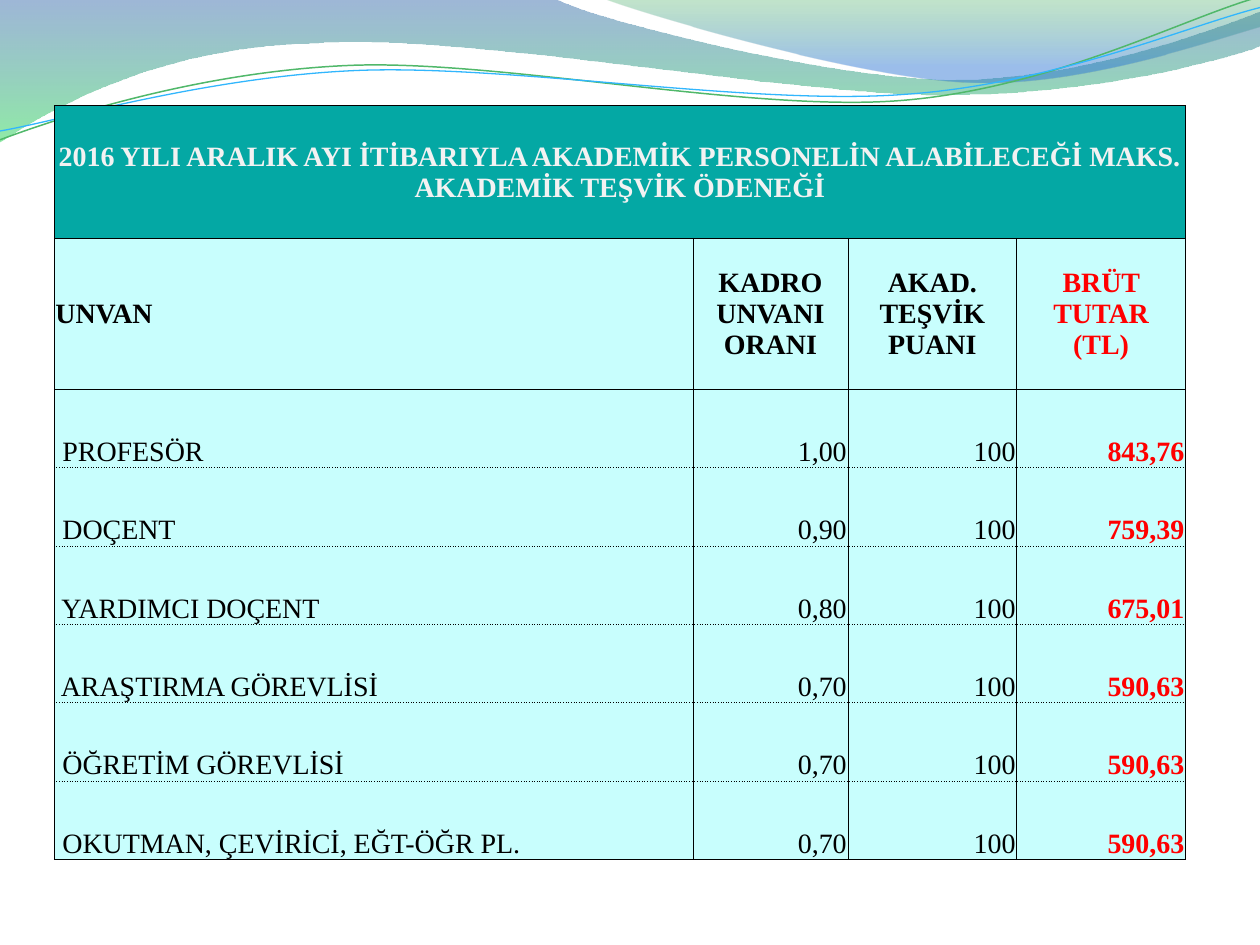
from lxml.etree import SubElement
from pptx import Presentation
from pptx.dml.color import RGBColor
from pptx.enum.text import MSO_ANCHOR as Anchor, PP_ALIGN as Align
from pptx.oxml import parse_xml
from pptx.oxml.ns import nsdecls, qn
from pptx.util import Inches, Pt

BLACK = RGBColor(0x00, 0x00, 0x00)
RED = RGBColor(0xFF, 0x00, 0x00)
OFF_WHITE = RGBColor(0xF2, 0xF2, 0xF2)
TEAL = RGBColor(0x04, 0xA8, 0xA4)
PALE_CYAN = RGBColor(0xC8, 0xFE, 0xFD)
WAVE_BLUE = RGBColor(0x29, 0x60, 0xA7)
WAVE_GREEN = RGBColor(0x35, 0xDA, 0x5E)
CREST_GREEN = RGBColor(0x36, 0xA7, 0x52)
CREST_BLUE = RGBColor(0x24, 0x72, 0xD3)
LINE_GREEN = RGBColor(0x50, 0xB8, 0x6A)
LINE_BLUE = RGBColor(0x31, 0xB6, 0xFD)


def add_curve(shapes, start, segments, close):
    """Draw a freeform; a segment is a line (x, y) or a cubic Bezier of six numbers."""
    builder = shapes.build_freeform(Inches(start[0]), Inches(start[1]))
    builder.add_line_segments(
        [(Inches(segment[-2]), Inches(segment[-1])) for segment in segments], close=close)
    shape = builder.convert_to_shape()
    shape.shadow.inherit = False
    # The builder only makes straight segments: bend the ones that have handles
    straight_segments = list(shape._element.iter(qn("a:lnTo")))
    for straight, segment in zip(straight_segments, segments):
        if len(segment) == 6:
            straight.tag = qn("a:cubicBezTo")
            straight.clear()
            for x, y in zip(segment[::2], segment[1::2]):
                SubElement(straight, qn("a:pt"), x=str(Inches(x) - shape.left),
                           y=str(Inches(y) - shape.top))
    return shape


def format_cell(cell, text, *, fill, top="solid", bottom="solid", color=BLACK,
                bold=False, align=Align.LEFT, anchor=Anchor.BOTTOM):
    properties = cell._tc.get_or_add_tcPr()
    for side, dash in (("L", "solid"), ("R", "solid"), ("T", top), ("B", bottom)):
        properties.append(parse_xml(
            f'<a:ln{side} {nsdecls("a")} w="{Pt(0.5)}"><a:solidFill>'
            f'<a:srgbClr val="{BLACK}"/></a:solidFill>'
            f'<a:prstDash val="{dash}"/></a:ln{side}>'))
    cell.fill.solid()
    cell.fill.fore_color.rgb = fill
    cell.margin_left = cell.margin_right = cell.margin_top = Inches(0.01)
    cell.margin_bottom = 0
    cell.vertical_anchor = anchor
    paragraph = cell.text_frame.paragraphs[0]
    paragraph.text = text
    paragraph.alignment = align
    for run in paragraph.runs:
        run.font.name = "Times New Roman"
        run.font.size = Pt(16)
        run.font.bold = bold
        run.font.color.rgb = color


presentation = Presentation()
presentation.slide_width = Inches(10)
presentation.slide_height = Inches(7.5)
slide = presentation.slides.add_slide(presentation.slide_layouts[6])

# Translucent waves: start, segments, gradient stops (position, colour, opacity %)
waves = [
    ((0, 0),
     [(4.4, -0.01), (4.76, 0.17, 6.64, 0.63, 7.58, 0.63),
      (8.53, 0.63, 9.58, 0.26, 10, 0.09), (10.01, 0.36),
      (9.83, 0.44, 8.7, 0.76, 7.46, 0.75), (6.22, 0.75, 3.82, 0.28, 2.57, 0.34),
      (1.29, 0.36, 0.46, 0.83, -0.01, 1.13)],
     [(0, WAVE_BLUE, 45), (1, WAVE_GREEN, 55)]),
    ((4.79, -0.01),
     [(5.09, 0.11, 6.82, 0.62, 7.69, 0.65), (8.56, 0.69, 9.61, 0.32, 10, 0.21),
      (10, 0)],
     [(0, CREST_GREEN, 30), (0.8, CREST_BLUE, 45)]),
]
for start, segments, stops in waves:
    wave = add_curve(slide.shapes, start, segments, close=True)
    wave.line.fill.background()
    wave.fill.gradient()
    wave.fill.gradient_angle = 270
    for stop, (position, color, opacity) in zip(wave.fill.gradient_stops, stops):
        stop.position = position
        stop.color.rgb = color
    color_elements = wave._element.spPr.findall(f".//{qn('a:gs')}/{qn('a:srgbClr')}")
    for element, (position, color, opacity) in zip(color_elements, stops):
        SubElement(element, qn("a:alpha"), val=str(opacity * 1000))

wave_lines = [
    ((0, 1.11),
     [(0.48, 0.93, 1.58, 0.57, 2.77, 0.52), (3.95, 0.47, 5.93, 0.89, 7.13, 0.8),
      (8.33, 0.71, 9.38, 0.15, 9.98, -0.02)], LINE_GREEN, 0.85),
    ((0, 1.04),
     [(0.47, 0.96, 1.64, 0.61, 2.83, 0.56), (4.03, 0.51, 5.97, 0.84, 7.17, 0.75),
      (8.36, 0.67, 9.41, 0.21, 10, 0.06)], LINE_BLUE, 0.75),
]
for start, segments, color, width in wave_lines:
    wave_line = add_curve(slide.shapes, start, segments, close=False)
    wave_line.fill.background()
    wave_line.line.color.rgb = color
    wave_line.line.width = Pt(width)

# Allowance table
title = ("2016 YILI ARALIK AYI İTİBARIYLA AKADEMİK PERSONELİN ALABİLECEĞİ MAKS. "
         "AKADEMİK TEŞVİK ÖDENEĞİ")
headers = ["UNVAN", "KADRO UNVANI ORANI", "AKAD. TEŞVİK PUANI", "BRÜT TUTAR\n(TL)"]
allowances = [
    (" PROFESÖR", "1,00", "100", "843,76"),
    (" DOÇENT", "0,90", "100", "759,39"),
    (" YARDIMCI DOÇENT", "0,80", "100", "675,01"),
    (" ARAŞTIRMA GÖREVLİSİ", "0,70", "100", "590,63"),
    (" ÖĞRETİM GÖREVLİSİ", "0,70", "100", "590,63"),
    (" OKUTMAN, ÇEVİRİCİ, EĞT-ÖĞR PL.", "0,70", "100", "590,63"),
]
table_height = 5.98
title_height, header_height = 1.05, 1.2
allowance_height = (table_height - title_height - header_height) / len(allowances)
column_widths = [5.07, 1.23, 1.34, 1.34]
row_heights = [title_height, header_height] + [allowance_height] * len(allowances)
table = slide.shapes.add_table(
    len(row_heights), len(column_widths), Inches(0.43), Inches(0.84),
    Inches(sum(column_widths)), Inches(table_height)).table
for column, width in zip(table.columns, column_widths):
    column.width = Inches(width)
for row, height in zip(table.rows, row_heights):
    row.height = Inches(height)

table.cell(0, 0).merge(table.cell(0, 3))
for index, header in enumerate(headers):
    format_cell(table.cell(0, index), title if index == 0 else "", fill=TEAL,
                color=OFF_WHITE, bold=True, align=Align.CENTER, anchor=Anchor.MIDDLE)
    format_cell(table.cell(1, index), header, fill=PALE_CYAN, bold=True,
                color=RED if index == 3 else BLACK,
                align=Align.CENTER if index else Align.LEFT, anchor=Anchor.MIDDLE)

for number, allowance in enumerate(allowances):
    for index, text in enumerate(allowance):
        is_amount = index == 3
        format_cell(table.cell(number + 2, index), text, fill=PALE_CYAN,
                    top="sysDot" if number else "solid",
                    bottom="sysDot" if number < len(allowances) - 1 else "solid",
                    color=RED if is_amount else BLACK, bold=is_amount,
                    align=Align.RIGHT if index else Align.LEFT)

presentation.save("out.pptx")
